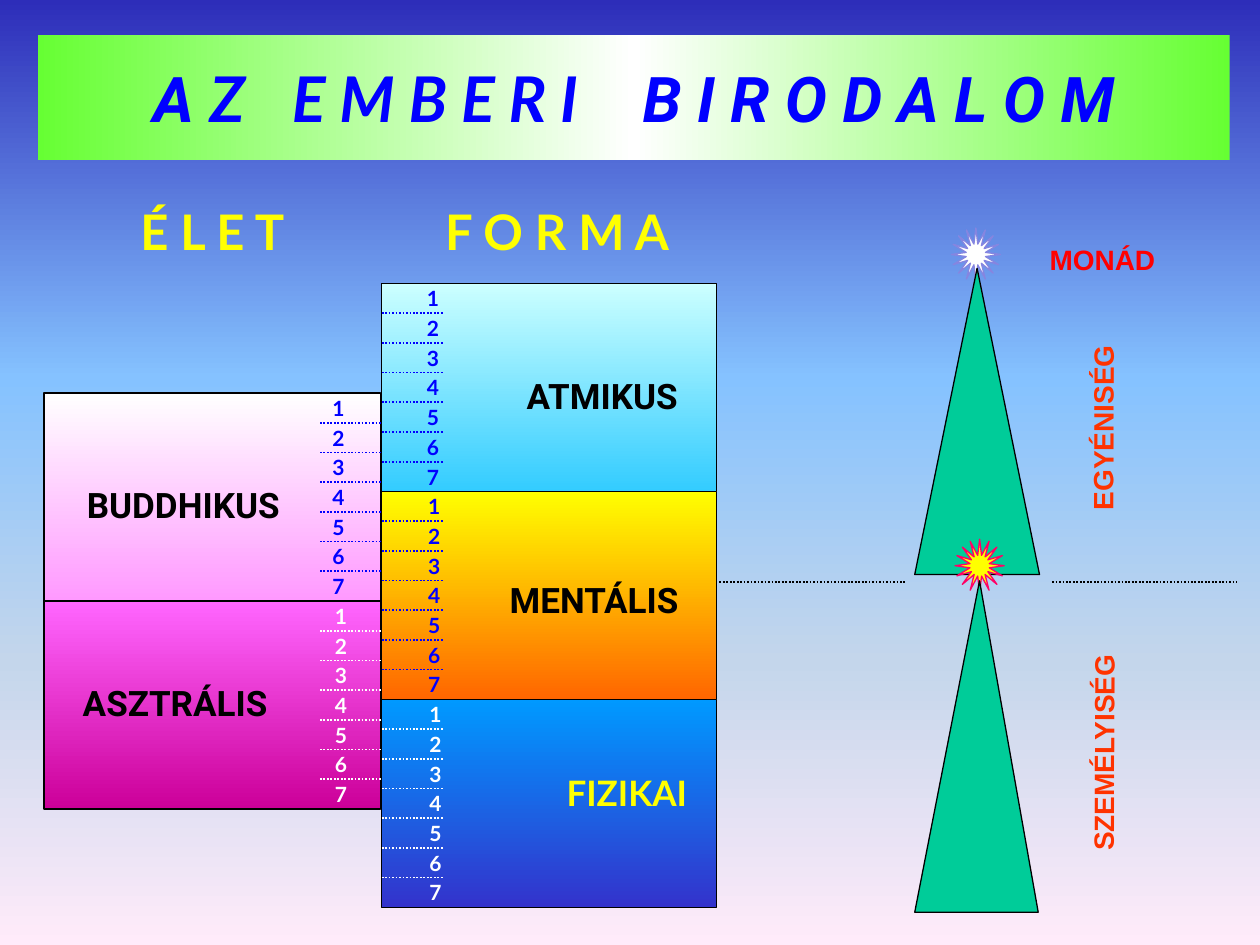
import pptx
import pptx.util
import pptx.dml.color
import pptx.enum.dml
import pptx.enum.shapes
import pptx.enum.text
import pptx.oxml.ns
from lxml import etree

Inches, Pt = pptx.util.Inches, pptx.util.Pt
RGB = pptx.dml.color.RGBColor.from_string
SHAPE = pptx.enum.shapes.MSO_SHAPE
ANCHOR = pptx.enum.text.MSO_ANCHOR
FIT = pptx.enum.text.MSO_AUTO_SIZE
qn = pptx.oxml.ns.qn

COLORS = {
    "blue": "0000FF", "yellow": "FFFF00", "white": "FFFFFF", "black": "000000",
    "red": "FF0000", "orange": "FF3300", "green": "00CC99", "lime": "66FF33",
    "lilac": "8585E0", "pink": "FF0066",
}
BACKGROUND = [(0, "2D2DB9"), (40, "85C2FF"), (70, "C4D6EB"), (100, "FFEBFA")]
BANNER = [(0, COLORS["lime"]), (50, COLORS["white"]), (100, COLORS["lime"])]

TITLE = [("A ", "Roboto", 0), ("Z", "Lato", 0), (" ", "Lato", 19),
         ("E M B E R I", "Lato", 0), (" ", "Roboto", 28),
         ("B I R O D A L O M", "Roboto", 0)]
HEADINGS = [("É L E T", 0.66, 2.05), ("F O R M A", 3.24, 2.36)]

BAND_H, LEVELS, TICK_W = 1.65, 7, 0.49
STEP = BAND_H / LEVELS
COLUMNS = {
    "life": {"left": 0.35, "width": 2.67, "tick": 2.54},
    "form": {"left": 3.03, "width": 2.66, "tick": 3.03},
}
BANDS = [
    ("form", 2.25, "CCFFFF", "33CCFF", "blue", 3.29,
     "ATMIKUS", "Roboto", "black", (3.9, 2.92, 1.76, 0.43)),
    ("form", 3.9, "FFFF00", "FF6600", "blue", 3.3,
     "MENTÁLIS", "Roboto", "black", (3.81, 4.54, 1.81, 0.43)),
    ("form", 5.55, "0099FF", "3333CC", "white", 3.31,
     "FIZIKAI", "Lato", "yellow", (4.14, 6.07, 1.67, 0.43)),
    ("life", 3.12, "FFFFFF", "FF99FF", "blue", 2.54,
     "BUDDHIKUS", "Roboto", "black", (0.43, 3.79, 2.05, 0.43)),
    ("life", 4.77, "FF66FF", "CC0099", "white", 2.56,
     "ASZTRÁLIS", "Roboto", "black", (0.43, 5.36, 1.92, 0.43)),
]
FIGURES = [
    (SHAPE.STAR_16_POINT, (7.55, 1.81, 0.39, 0.42), 0.2, "white", "lilac"),
    (SHAPE.ISOSCELES_TRIANGLE, (7.26, 2.13, 0.99, 2.43), 0.5, "green", "black"),
    (SHAPE.STAR_16_POINT, (7.58, 4.28, 0.39, 0.42), 0.2, "yellow", "pink"),
    (SHAPE.ISOSCELES_TRIANGLE, (7.26, 4.61, 0.98, 2.63), 0.525, "green", "black"),
]
SIDE_LABELS = [
    ("MONÁD", (8.22, 1.87, 1.06, 0.37), "red", 0),
    ("EGYÉNISÉG", (7.93, 3.21, 1.64, 0.37), "orange", 270.2),
    ("SZEMÉLYISÉG", (7.64, 5.79, 2.23, 0.37), "orange", 270.2),
]
DIVIDER_Y, DIVIDER_W, DIVIDERS = 4.62, 1.47, [5.71, 8.35]


def place(box):
    return [Inches(v) for v in box]


def set_gradient(fill, element, stops, angle):
    fill.gradient()
    fill.gradient_angle = angle
    gs_list = next(element.iter(qn("a:gsLst")))
    for gs in list(gs_list):
        gs_list.remove(gs)
    for pos, color in stops:
        gs = etree.SubElement(gs_list, qn("a:gs"), pos=str(pos * 1000))
        etree.SubElement(gs, qn("a:srgbClr"), val=color)


def add_run(p, text, font="Lato", size=12, color="blue", italic=False, spacing=0):
    r = p.add_run()
    r.text = text
    r.font.name, r.font.size = font, Pt(size)
    r.font.bold, r.font.italic = True, italic
    r.font.color.rgb = RGB(COLORS[color])
    if spacing:
        r.font._element.set("spc", str(spacing * 100))


def add_text(text, box, anchor=ANCHOR.TOP, rotation=0, **style):
    sp = s.shapes.add_textbox(*place(box))
    sp.rotation = rotation
    tf = sp.text_frame
    tf.word_wrap, tf.auto_size, tf.vertical_anchor = True, FIT.SHAPE_TO_FIT_TEXT, anchor
    p = tf.paragraphs[0]
    p.alignment = pptx.enum.text.PP_ALIGN.CENTER
    add_run(p, text, **style)


def add_outlined(kind, box, line="black"):
    sp = s.shapes.add_shape(kind, *place(box))
    sp.shadow.inherit = False
    sp.line.color.rgb = RGB(COLORS[line])
    sp.line.width = Pt(0.75)
    return sp


def add_dotted(x, y, width, color):
    c = s.shapes.add_connector(pptx.enum.shapes.MSO_CONNECTOR.STRAIGHT,
                               *place((x, y, x + width, y)))
    c.line.color.rgb = RGB(COLORS[color])
    c.line.width = Pt(1)
    c.line.dash_style = pptx.enum.dml.MSO_LINE.ROUND_DOT
    etree.SubElement(c._element.spPr, qn("a:effectLst"))


prs = pptx.Presentation()
prs.slide_width, prs.slide_height = Inches(10), Inches(7.5)
s = prs.slides.add_slide(prs.slide_layouts[5])
set_gradient(s.background.fill, s._element, BACKGROUND, 270)

title = s.shapes.title
title.left, title.top, title.width, title.height = place((0.3, 0.28, 9.46, 0.99))
set_gradient(title.fill, title._element, BANNER, 0)
tf = title.text_frame
tf.auto_size, tf.vertical_anchor = FIT.NONE, ANCHOR.MIDDLE
p = tf.paragraphs[0]
p.alignment = pptx.enum.text.PP_ALIGN.CENTER
for text, font, spacing in TITLE:
    add_run(p, text, font=font, size=36, italic=True, spacing=spacing)

for text, left, width in HEADINGS:
    add_text(text, (left, 1.55, width, 0.57), size=28, color="yellow")

for column, top, start, end, _, _, label, font, color, box in BANDS:
    col = COLUMNS[column]
    sp = add_outlined(SHAPE.RECTANGLE, (col["left"], top, col["width"], BAND_H))
    set_gradient(sp.fill, sp._element, [(0, start), (100, end)], 270)
    add_text(label, box, font=font, size=20, color=color)

for column, top, _, _, color, number_x, *_ in BANDS:
    for i in range(LEVELS):
        y = top + i * STEP
        add_text(str(i + 1), (number_x, y - 0.03, 0.24, 0.3), color=color)
        if i:
            add_dotted(COLUMNS[column]["tick"], y, TICK_W, color)

for kind, box, adjustment, fill, line in FIGURES:
    sp = add_outlined(kind, box, line)
    sp.adjustments[0] = adjustment
    sp.fill.solid()
    sp.fill.fore_color.rgb = RGB(COLORS[fill])

for text, box, color, rotation in SIDE_LABELS:
    add_text(text, box, anchor=ANCHOR.MIDDLE, rotation=rotation,
             font="Arial", size=16, color=color)

for x in DIVIDERS:
    add_dotted(x, DIVIDER_Y, DIVIDER_W, "black")

prs.save("out.pptx")
